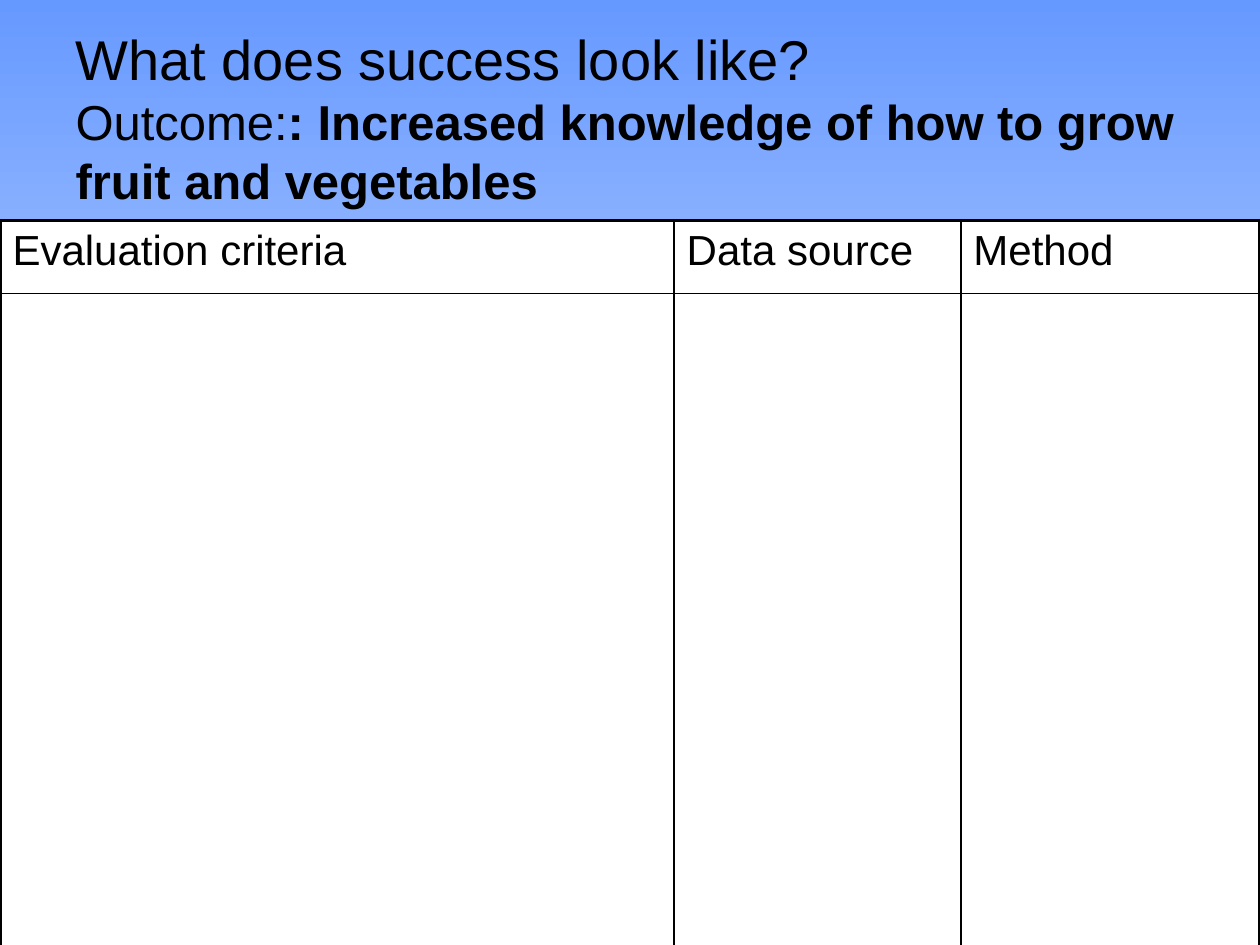
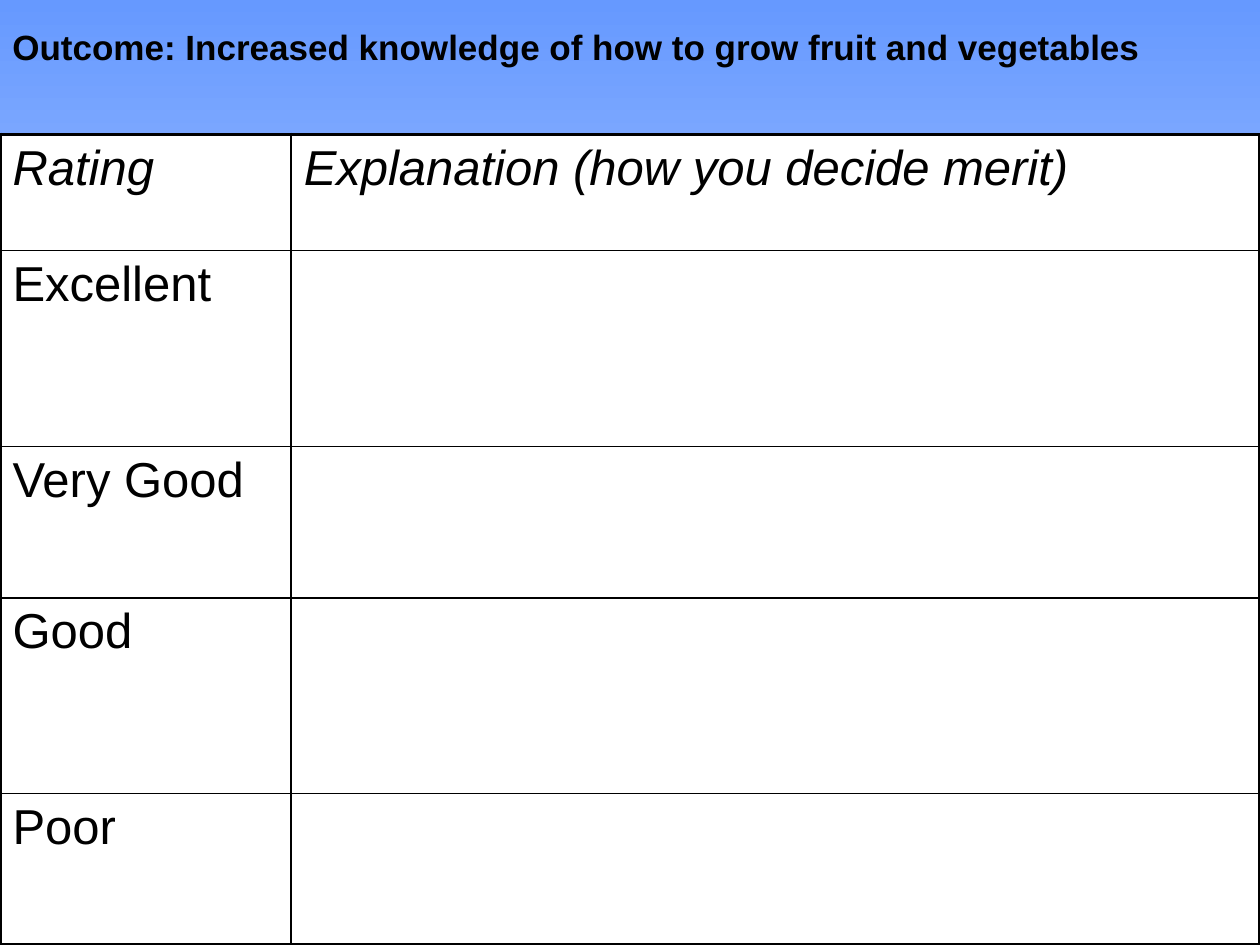
from lxml.etree import SubElement
from pptx import Presentation
from pptx.dml.color import RGBColor
from pptx.enum.text import MSO_ANCHOR as Anchor, MSO_AUTO_SIZE as AutoSize, PP_ALIGN as Align
from pptx.oxml.ns import qn
from pptx.util import Cm, Pt

# Shared style
FONT = "Arial"
BLACK, WHITE, SKY = "000000", "FFFFFF", "6699FF"
OUTER_LINE, INNER_LINE = Pt(2.25), Pt(1)
WIDTH, HEIGHT = 25.4, 19.05
TITLE_ONLY, BLANK = 5, 6
OUTCOME = "Increased knowledge of how to grow fruit and vegetables"


def color(hex_text):
    return RGBColor.from_string(hex_text)


def add_run(paragraph, text, size, bold=False, italic=False):
    run = paragraph.add_run()
    run.text = text
    font = run.font
    font.name, font.size, font.bold, font.italic = FONT, Pt(size), bold, italic
    font.color.rgb = color(BLACK)


def add_slide(presentation, layout_index):
    """Add a slide whose background fades downwards from blue to white."""
    slide = presentation.slides.add_slide(presentation.slide_layouts[layout_index])
    fill = slide.background.fill
    fill.gradient()
    fill.gradient_angle = 270
    for stop, position, hex_text in zip(fill.gradient_stops, (0, 1), (SKY, WHITE)):
        stop.position = position
        stop.color.rgb = color(hex_text)
    return slide


def set_border(cell, side, width):
    line = SubElement(cell._tc.get_or_add_tcPr(), qn(f"a:ln{side}"), w=str(width))
    solid = SubElement(line, qn("a:solidFill"))
    SubElement(solid, qn("a:srgbClr"), val=BLACK)


def add_grid(slide, left, top, column_widths, row_heights, texts, size, italic_header=False):
    """White table with a heavy frame; texts maps (row, column) to wording."""
    rows, columns = len(row_heights), len(column_widths)
    table = slide.shapes.add_table(
        rows, columns, Cm(left), Cm(top), Cm(sum(column_widths)), Cm(sum(row_heights))
    ).table
    table.first_row = table.horz_banding = False
    for column, width in zip(table.columns, column_widths):
        column.width = Cm(width)
    for row, height in zip(table.rows, row_heights):
        row.height = Cm(height)

    for i in range(rows):
        for j in range(columns):
            cell = table.cell(i, j)
            on_frame = {"L": j == 0, "R": j == columns - 1, "T": i == 0, "B": i == rows - 1}
            for side, is_outer in on_frame.items():
                set_border(cell, side, OUTER_LINE if is_outer else INNER_LINE)
            cell.fill.solid()
            cell.fill.fore_color.rgb = color(WHITE)
            if (i, j) in texts:
                add_run(cell.text_frame.paragraphs[0], texts[i, j], size,
                        italic=italic_header and i == 0)


def add_title(slide, left, top, width, height):
    title = slide.shapes.title
    title.left, title.top, title.width, title.height = map(Cm, (left, top, width, height))
    frame = title.text_frame
    frame.word_wrap, frame.auto_size = True, AutoSize.NONE
    frame.vertical_anchor = Anchor.MIDDLE
    paragraph = frame.paragraphs[0]
    paragraph.alignment = Align.LEFT
    add_run(paragraph, "What does success look like?", 32)
    paragraph.add_line_break()
    add_run(paragraph, "Outcome:", 28)
    add_run(paragraph, f": {OUTCOME}", 28, bold=True)


def add_outcome_label(slide, left, top, width, height):
    frame = slide.shapes.add_textbox(*map(Cm, (left, top, width, height))).text_frame
    frame.word_wrap, frame.auto_size = True, AutoSize.SHAPE_TO_FIT_TEXT
    add_run(frame.paragraphs[0], f"Outcome: {OUTCOME}", 20, bold=True)


def build_criteria_slide(presentation):
    slide = add_slide(presentation, TITLE_ONLY)
    add_title(slide, 1.27, 0.76, 22.86, 3.18)
    headers = ["Evaluation criteria", "Data source", "Method"]
    add_grid(slide, 0, 4.45, [13.59, 5.78, 6.03], [1.47, 13.21],
             {(0, j): text for j, text in enumerate(headers)}, 24)


def build_rating_slide(presentation):
    slide = add_slide(presentation, BLANK)
    ratings = ["Rating", "Excellent", "Very Good", "Good", "Poor"]
    texts = {(i, 0): text for i, text in enumerate(ratings)}
    texts[0, 1] = "Explanation (how you decide merit)"
    tall, short = 3.95, 3.05
    add_grid(slide, 0, 2.71, [5.87, 19.53], [2.34, tall, short, tall, short],
             texts, 28, italic_header=True)
    add_outcome_label(slide, 0, 0.38, 24.5, 1.12)


def main():
    presentation = Presentation()
    presentation.slide_width, presentation.slide_height = Cm(WIDTH), Cm(HEIGHT)
    build_criteria_slide(presentation)
    build_rating_slide(presentation)
    presentation.save("out.pptx")


if __name__ == "__main__":
    main()
